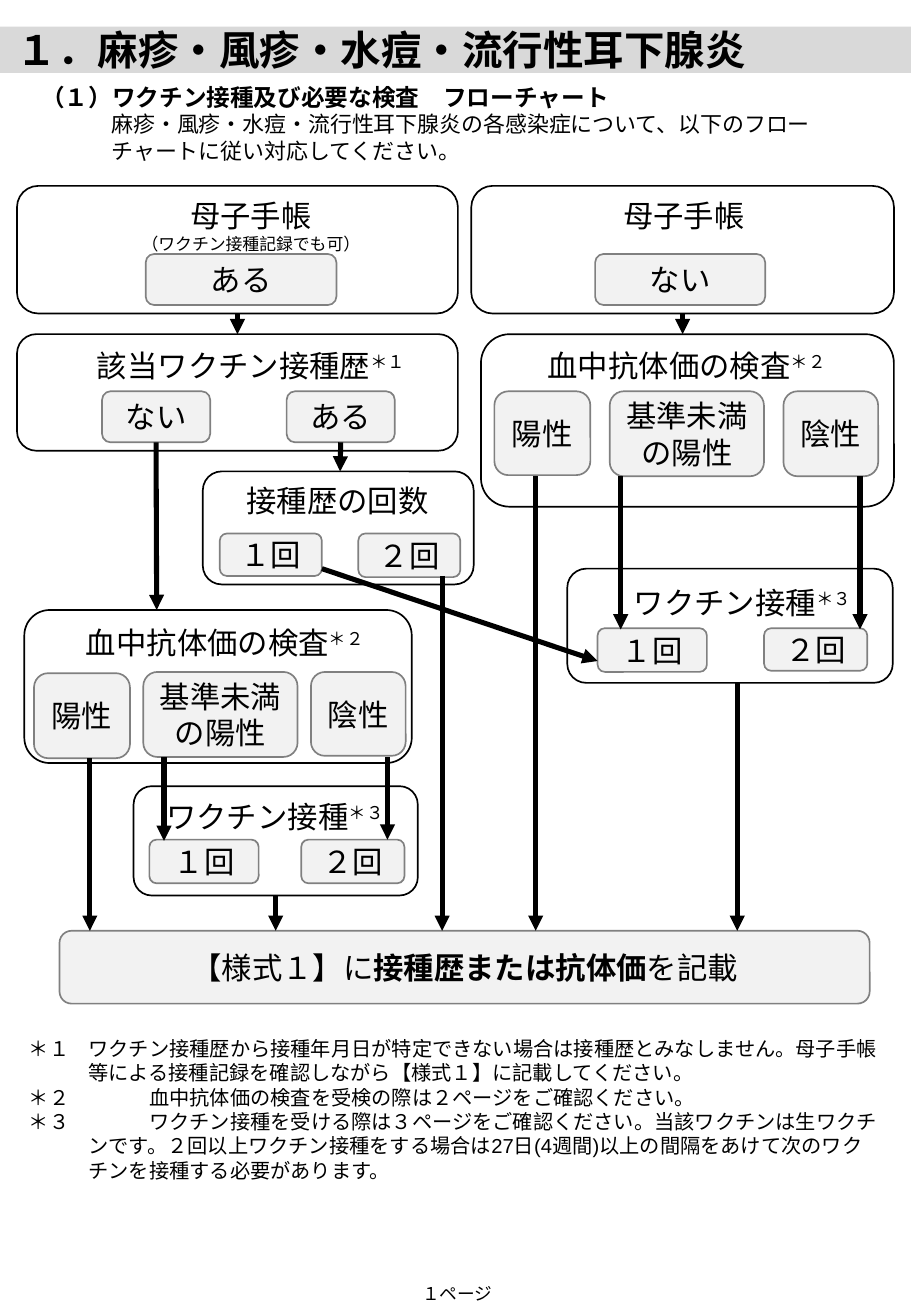
import pptx
import pptx.util
import pptx.dml.color
import pptx.enum.shapes
import pptx.enum.text
import pptx.oxml.ns
import lxml.etree

Inches = pptx.util.Inches
Pt = pptx.util.Pt
qn = pptx.oxml.ns.qn
SHAPE = pptx.enum.shapes.MSO_SHAPE
ALIGN = pptx.enum.text.PP_ALIGN
BLACK = pptx.dml.color.RGBColor(0x00, 0x00, 0x00)
WHITE = pptx.dml.color.RGBColor(0xFF, 0xFF, 0xFF)
BAR_GRAY = pptx.dml.color.RGBColor(0xD9, 0xD9, 0xD9)
ANSWER_GRAY = pptx.dml.color.RGBColor(0xF2, 0xF2, 0xF2)
EDGE_GRAY = pptx.dml.color.RGBColor(0x80, 0x80, 0x80)

deck = pptx.Presentation()
deck.slide_width, deck.slide_height = Inches(7.5), Inches(10.83)
slide = deck.slides.add_slide(deck.slide_layouts[6])


def add_run(paragraph, text, size=18, bold=False, raised=False):
    run = paragraph.add_run()
    run.text = text
    run.font.name = "Arial"
    run.font.size = Pt(size)
    run.font.bold = bold
    run.font.color.rgb = BLACK
    if raised:
        run._r.get_or_add_rPr().set("baseline", "30000")


def add_text_frame(left, top, width, height, wrap=True):
    box = slide.shapes.add_textbox(Inches(left), Inches(top), Inches(width), Inches(height))
    box.text_frame.word_wrap = wrap
    box.text_frame.auto_size = pptx.enum.text.MSO_AUTO_SIZE.SHAPE_TO_FIT_TEXT
    return box.text_frame


# Heading and introduction
title_bar = slide.shapes.add_shape(
    SHAPE.RECTANGLE, Inches(-0.12), Inches(0.22), Inches(7.92), Inches(0.38))
title_bar.shadow.inherit = False
title_bar.fill.solid()
title_bar.fill.fore_color.rgb = BAR_GRAY
title_bar.line.fill.background()

title = add_text_frame(0.04, 0.16, 7.21, 0.5)
add_run(title.paragraphs[0], "１．麻疹・風疹・水痘・流行性耳下腺炎", size=24, bold=True)

intro = add_text_frame(0.24, 0.63, 6.67, 0.77)
add_run(intro.paragraphs[0], "（１）ワクチン接種及び必要な検査　フローチャート", size=14, bold=True)
guidance = intro.add_paragraph()
guidance._p.get_or_add_pPr().set("marL", str(Inches(0.58)))
add_run(guidance, "麻疹・風疹・水痘・流行性耳下腺炎の各感染症について、"
        "以下のフローチャートに従い対応してください。", size=13)

# Steps are white frames without text; answers are gray boxes
boxes = [
    ("handbook yes", "", 0.14, 1.53, 3.63, 1.05),
    ("handbook no", "", 3.88, 1.53, 3.48, 1.05),
    ("history", "", 0.14, 2.75, 3.63, 0.96),
    ("right test", "", 3.96, 2.75, 3.4, 1.42),
    ("count", "", 1.67, 3.88, 2.23, 0.93),
    ("right vaccination", "", 4.67, 4.68, 2.68, 0.94),
    ("left test", "", 0.2, 5.02, 3.19, 1.26),
    ("left vaccination", "", 1.1, 6.47, 2.34, 0.9),
    ("has handbook", "ある", 1.2, 2.09, 1.57, 0.42),
    ("lacks handbook", "ない", 4.9, 2.09, 1.4, 0.42),
    ("history no", "ない", 0.84, 3.22, 0.89, 0.42),
    ("history yes", "ある", 2.36, 3.22, 0.89, 0.42),
    ("counted once", "１回", 1.81, 4.39, 0.84, 0.35),
    ("counted twice", "２回", 2.95, 4.39, 0.84, 0.36),
    ("right positive", "陽性", 4.07, 3.22, 0.79, 0.69),
    ("right weak", "基準未満の陽性", 5.02, 3.22, 1.27, 0.7),
    ("right negative", "陰性", 6.45, 3.22, 0.78, 0.7),
    ("right once", "１回", 4.92, 5.17, 0.9, 0.36),
    ("right twice", "２回", 6.29, 5.17, 0.85, 0.35),
    ("left positive", "陽性", 0.28, 5.54, 0.79, 0.7),
    ("left weak", "基準未満の陽性", 1.18, 5.53, 1.27, 0.7),
    ("left negative", "陰性", 2.56, 5.53, 0.78, 0.69),
    ("left once", "１回", 1.23, 6.91, 0.9, 0.36),
    ("left twice", "２回", 2.48, 6.91, 0.85, 0.36),
    ("record", "【様式１】に", 0.49, 7.66, 6.67, 0.6),
]
steps = {}
for key, answer, left, top, width, height in boxes:
    step = slide.shapes.add_shape(
        SHAPE.ROUNDED_RECTANGLE, Inches(left), Inches(top), Inches(width), Inches(height))
    step.shadow.inherit = False
    step.fill.solid()
    step.fill.fore_color.rgb = ANSWER_GRAY if answer else WHITE
    step.line.color.rgb = EDGE_GRAY if answer else BLACK
    step.line.width = Pt(1)
    steps[key] = step
    if answer:
        frame = step.text_frame
        frame.word_wrap = True
        frame.margin_left = frame.margin_right = Inches(0.05)
        frame.vertical_anchor = pptx.enum.text.MSO_ANCHOR.MIDDLE
        frame.paragraphs[0].alignment = ALIGN.CENTER
        add_run(frame.paragraphs[0], answer)

record_line = steps["record"].text_frame.paragraphs[0]
add_run(record_line, "接種歴または抗体価", bold=True)
add_run(record_line, "を記載")

# Step headings with their footnote marks
headings = [
    ("該当ワクチン接種歴", "＊１", 0.7, 2.81, 2.87),
    ("血中抗体価の検査", "＊２", 4.41, 2.81, 2.68),
    ("血中抗体価の検査", "＊２", 0.61, 5.09, 2.74),
    ("ワクチン接種", "＊３", 5.12, 4.76, 2.12),
    ("ワクチン接種", "＊３", 1.27, 6.52, 2.12),
    ("接種歴の回数", "", 1.93, 3.92, 1.72),
]
for heading, mark, left, top, width in headings:
    line = add_text_frame(left, top, width, 0.4, wrap=bool(mark)).paragraphs[0]
    add_run(line, heading)
    if mark:
        add_run(line, mark, raised=True)

for left, width, height, remark in [(1.06, 2.01, 0.57, "（ワクチン接種記録でも可）"),
                                    (4.78, 1.7, 0.4, "")]:
    handbook = add_text_frame(left, 1.57, width, height)
    handbook.paragraphs[0].alignment = ALIGN.CENTER
    add_run(handbook.paragraphs[0], "母子手帳")
    if remark:
        remark_line = handbook.add_paragraph()
        remark_line.alignment = ALIGN.CENTER
        add_run(remark_line, remark, size=10)

# Arrows: start, end, step joined at its bottom, step joined at its top
arrows = [
    (1.96, 2.58, 1.96, 2.75, "handbook yes", "history"),
    (5.62, 2.58, 5.62, 2.75, "handbook no", None),
    (2.8, 3.64, 2.8, 3.88, "history yes", None),
    (1.29, 3.64, 1.29, 5.02, "history no", None),
    (2.65, 4.68, 4.92, 5.44, None, None),
    (3.64, 4.74, 3.64, 7.66, None, None),
    (4.41, 3.92, 4.41, 7.66, None, None),
    (5.11, 3.92, 5.11, 5.18, None, None),
    (7.08, 3.92, 7.08, 5.18, None, None),
    (6.07, 5.62, 6.07, 7.66, None, None),
    (0.74, 6.24, 0.74, 7.66, None, None),
    (1.35, 6.23, 1.35, 6.92, None, None),
    (3.19, 6.23, 3.19, 6.91, None, None),
    (2.27, 7.37, 2.27, 7.66, "left vaccination", None),
]
for x1, y1, x2, y2, source, target in arrows:
    arrow = slide.shapes.add_connector(
        pptx.enum.shapes.MSO_CONNECTOR.STRAIGHT, Inches(x1), Inches(y1), Inches(x2), Inches(y2))
    if source:
        arrow.begin_connect(steps[source], 2)
    if target:
        arrow.end_connect(steps[target], 0)
    arrow.line.color.rgb = BLACK
    arrow.line.width = Pt(3)
    properties = arrow._element.spPr
    lxml.etree.SubElement(properties.find(qn("a:ln")), qn("a:tailEnd")).set("type", "triangle")
    lxml.etree.SubElement(properties, qn("a:effectLst"))

# Footnotes with a hanging indent
footnotes = [
    "＊１\tワクチン接種歴から接種年月日が特定できない場合は接種歴とみなしません。"
    "母子手帳等による接種記録を確認しながら【様式１】に記載してください。",
    "＊２\t\t血中抗体価の検査を受検の際は２ページをご確認ください。",
    "＊３\t\tワクチン接種を受ける際は３ページをご確認ください。当該ワクチンは生ワクチンです。"
    "２回以上ワクチン接種をする場合は27日(4週間)以上の間隔をあけて次のワクチンを接種する必要があります。",
]
notes_frame = add_text_frame(0.14, 8.48, 7.21, 1.31)
for index, footnote in enumerate(footnotes):
    note = notes_frame.add_paragraph() if index else notes_frame.paragraphs[0]
    layout = note._p.get_or_add_pPr()
    layout.set("marL", str(Inches(0.49)))
    layout.set("indent", str(Inches(-0.49)))
    tabs = lxml.etree.SubElement(layout, qn("a:tabLst"))
    lxml.etree.SubElement(tabs, qn("a:tab"), pos=str(Inches(0.49)), algn="l")
    add_run(note, footnote, size=12)

page_number = add_text_frame(2.66, 10.51, 2.21, 0.28).paragraphs[0]
page_number.alignment = ALIGN.CENTER
add_run(page_number, "１ページ", size=10.5)

deck.save("out.pptx")
